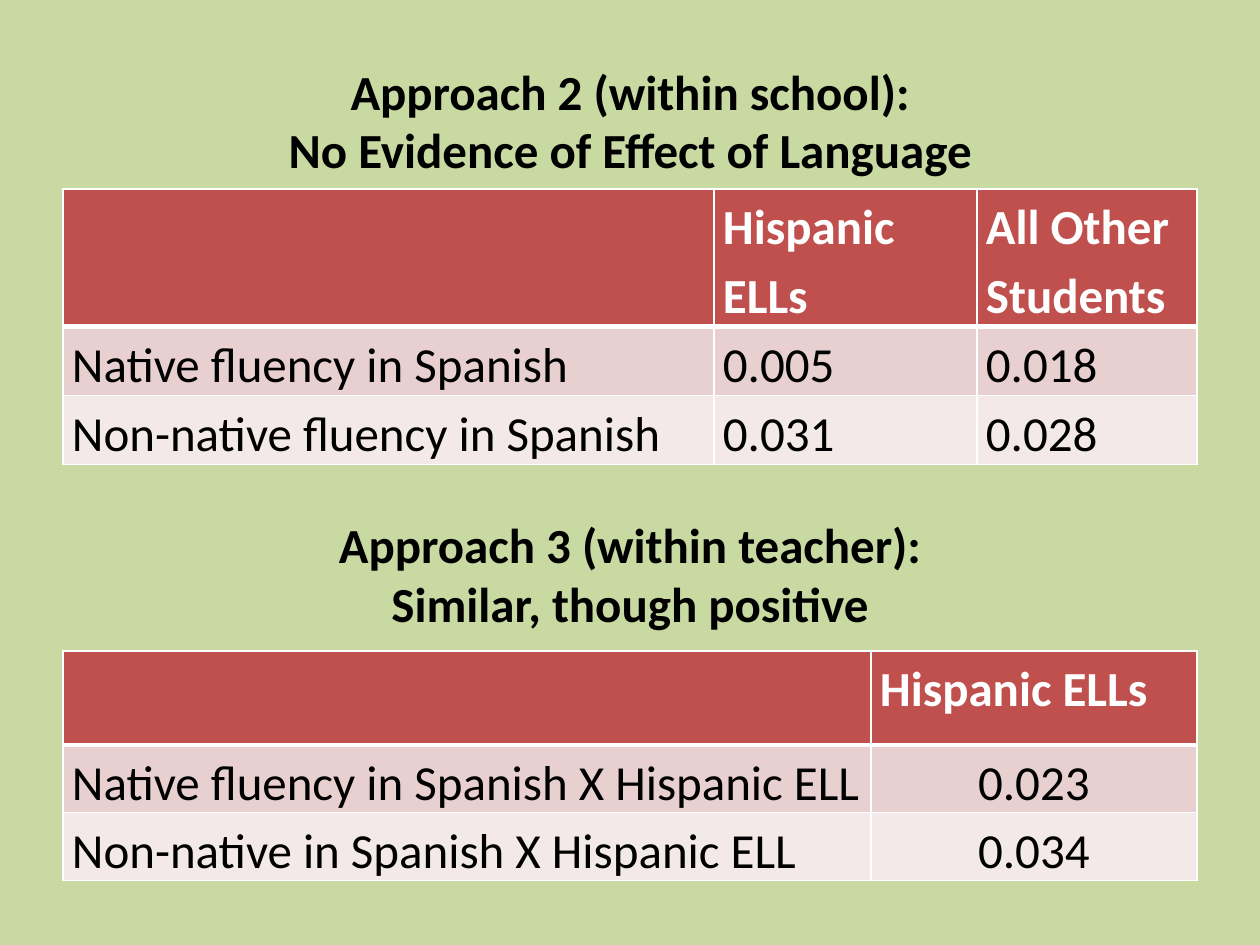
from lxml import etree
from pptx import Presentation
from pptx.dml.color import RGBColor
from pptx.enum.text import MSO_ANCHOR, PP_ALIGN
from pptx.oxml.ns import qn
from pptx.util import Pt

MIDDLE, TOP = MSO_ANCHOR.MIDDLE, MSO_ANCHOR.TOP
LEFT, CENTER = PP_ALIGN.LEFT, PP_ALIGN.CENTER

PX = 914400 // 126
FONT, SIZE = "Calibri", 28
BACKGROUND, BLACK, WHITE = "C8DAA2", "000000", "FFFFFF"
ROW_FILLS = ["C0504D", "E8D0D0", "F4E9E9"]
ROW_HEIGHTS = [94, 62, 62]
MARGIN, WIDTH, HEADING_HEIGHT, CELL_INSET = 63, 1134, 158, 9

SECTIONS = [
    {
        "heading": "Approach 2 (within school):\vNo Evidence of Effect of Language",
        "heading_top": 41,
        "table_top": 189,
        "columns": [651, 263, 220],
        "value_align": LEFT,
        "rows": [
            ["", "Hispanic ELLs", "All Other Students"],
            ["Native fluency in Spanish", "0.005", "0.018"],
            ["Non-native fluency in Spanish", "0.031", "0.028"],
        ],
    },
    {
        "heading": "Approach 3 (within teacher):\vSimilar, though positive",
        "heading_top": 494,
        "table_top": 651,
        "columns": [808, 326],
        "value_align": CENTER,
        "rows": [
            ["", "Hispanic ELLs"],
            ["Native fluency in Spanish X Hispanic ELL", "0.023"],
            ["Non-native in Spanish X Hispanic ELL", "0.034"],
        ],
    },
]


def px(n):
    return n * PX


def rgb(color):
    return RGBColor.from_string(color)


def format_text(tf, color, bold, align):
    for p in tf.paragraphs:
        p.alignment = align
        for r in p.runs:
            r.font.name, r.font.size, r.font.bold = FONT, Pt(SIZE), bold
            r.font.color.rgb = rgb(color)


def set_borders(cell, top, bottom):
    """Draw white cell borders; top and bottom are widths in points."""
    tc_pr = cell._tc.get_or_add_tcPr()
    for tag, width in (("lnL", 1), ("lnR", 1), ("lnT", top), ("lnB", bottom)):
        ln = etree.SubElement(tc_pr, qn(f"a:{tag}"), w=str(Pt(width)))
        fill = etree.SubElement(ln, qn("a:solidFill"))
        etree.SubElement(fill, qn("a:srgbClr"), val=WHITE)


def place_heading(shape, text, top):
    shape.left, shape.top = px(MARGIN), px(top)
    shape.width, shape.height = px(WIDTH), px(HEADING_HEIGHT)
    tf = shape.text_frame
    tf.word_wrap = True
    tf.vertical_anchor = MIDDLE
    tf.text = text
    format_text(tf, BLACK, True, CENTER)


def add_results_table(slide, section):
    rows, columns = section["rows"], section["columns"]
    table = slide.shapes.add_table(
        len(rows), len(columns), px(MARGIN), px(section["table_top"]),
        px(WIDTH), px(sum(ROW_HEIGHTS))).table
    for column, width in zip(table.columns, columns):
        column.width = px(width)
    for i, row in enumerate(rows):
        table.rows[i].height = px(ROW_HEIGHTS[i])
        header = i == 0
        for j, text in enumerate(row):
            cell = table.cell(i, j)
            is_value = not header and j > 0
            set_borders(cell, 3 if i == 1 else 1, 3 if header else 1)
            cell.fill.solid()
            cell.fill.fore_color.rgb = rgb(ROW_FILLS[i])
            cell.margin_left = cell.margin_right = px(CELL_INSET)
            cell.margin_top = cell.margin_bottom = 0
            cell.vertical_anchor = MIDDLE if is_value else TOP
            cell.text = text
            cell.text_frame.paragraphs[0].line_spacing = 1.15
            format_text(cell.text_frame, WHITE if header else BLACK, header,
                        section["value_align"] if is_value else LEFT)


def main():
    prs = Presentation()
    prs.slide_width, prs.slide_height = px(1260), px(945)
    slide = prs.slides.add_slide(prs.slide_layouts[5])
    slide.background.fill.solid()
    slide.background.fill.fore_color.rgb = rgb(BACKGROUND)

    for i, section in enumerate(SECTIONS):
        shape = slide.shapes.title if i == 0 else slide.shapes.add_textbox(0, 0, 0, 0)
        place_heading(shape, section["heading"], section["heading_top"])
        add_results_table(slide, section)

    prs.save("out.pptx")


if __name__ == "__main__":
    main()
